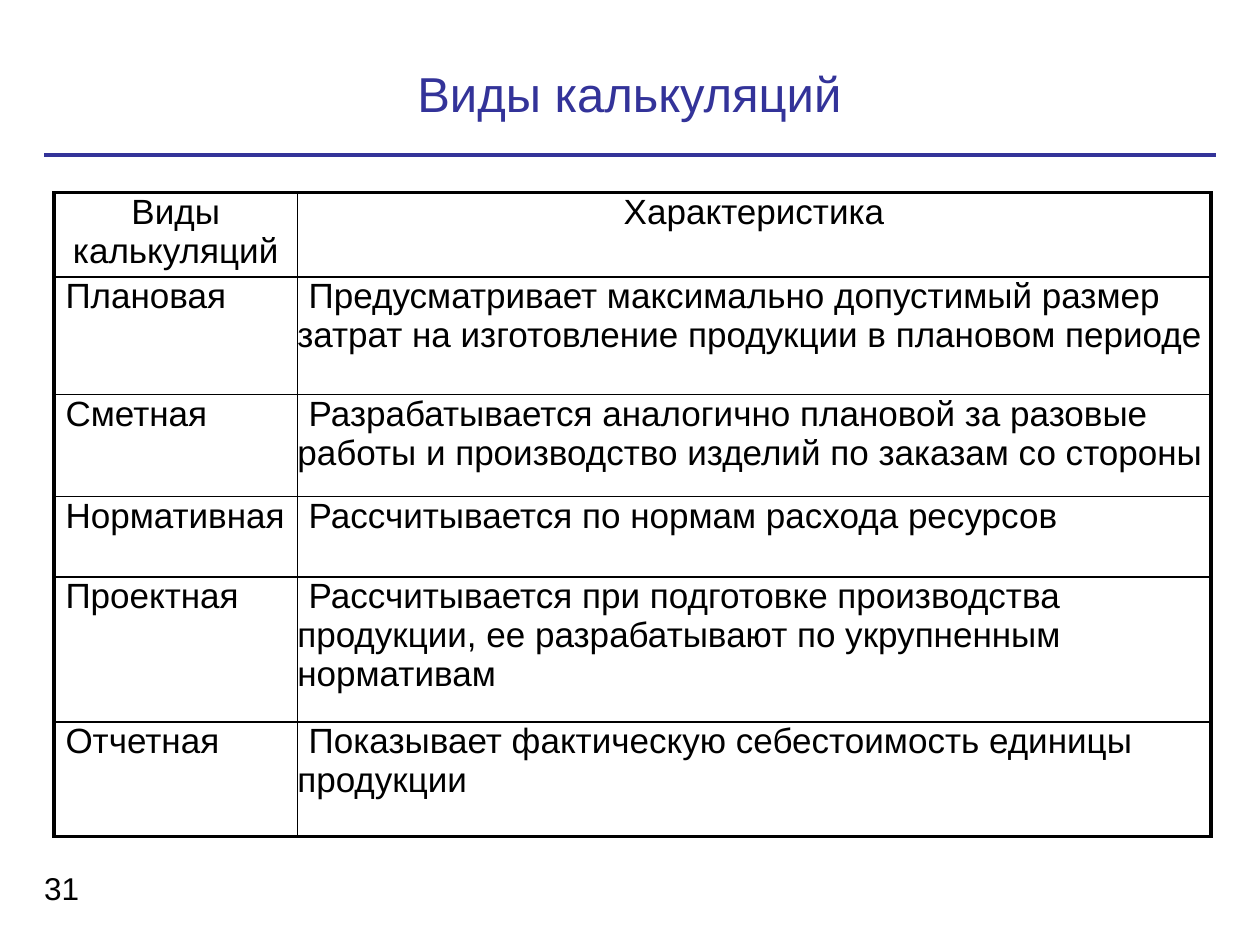
import pptx
import pptx.dml.color
import pptx.enum.shapes
import pptx.enum.text
import pptx.oxml
import pptx.oxml.ns
import pptx.util
from dataclasses import dataclass

ALIGN = pptx.enum.text.PP_ALIGN


@dataclass(frozen=True)
class Theme:
    font: str = "Arial"
    accent: str = "333399"
    ink: str = "000000"
    title_size: float = 28
    table_size: float = 20
    number_size: float = 18
    rule: float = 2
    outer_border: float = 2.25
    inner_border: float = 1
    first_indent: float = 0.9


def grid(count):
    """Length of grid units: the slide has 100 columns and 75 rows."""
    return pptx.util.Inches(count / 10)


class SlideBuilder:
    def __init__(self, deck, theme):
        self.theme = theme
        self.page = deck.slides.add_slide(deck.slide_layouts[5])

    def set_text(self, frame, text, size, color, align=ALIGN.LEFT):
        frame.text = text
        para = frame.paragraphs[0]
        para.alignment = align
        para.font.name = self.theme.font
        para.font.size = pptx.util.Pt(size)
        para.font.color.rgb = pptx.dml.color.RGBColor.from_string(color)
        return para

    def clear_margins(self, holder):
        holder.margin_left = holder.margin_right = 0
        holder.margin_top = holder.margin_bottom = 0

    def title(self, text, left, top, width, height, text_top):
        box = self.page.shapes.title
        box.left, box.top, box.width, box.height = map(grid, (left, top, width, height))
        frame = box.text_frame
        self.clear_margins(frame)
        frame.margin_top = grid(text_top)
        frame.vertical_anchor = pptx.enum.text.MSO_ANCHOR.TOP
        frame.auto_size = pptx.enum.text.MSO_AUTO_SIZE.NONE
        self.set_text(frame, text, self.theme.title_size, self.theme.accent, ALIGN.CENTER)

    def rule(self, left, right, top):
        line = self.page.shapes.add_connector(
            pptx.enum.shapes.MSO_CONNECTOR.STRAIGHT, *map(grid, (left, top, right, top)))
        line.line.width = pptx.util.Pt(self.theme.rule)
        line.line.color.rgb = pptx.dml.color.RGBColor.from_string(self.theme.accent)
        line._element.spPr.append(pptx.oxml.parse_xml(
            f'<a:effectLst {pptx.oxml.ns.nsdecls("a")}/>'))

    def number(self, text, left, top, width, height):
        box = self.page.shapes.add_textbox(*map(grid, (left, top, width, height)))
        frame = box.text_frame
        self.clear_margins(frame)
        frame.word_wrap = False
        frame.auto_size = pptx.enum.text.MSO_AUTO_SIZE.SHAPE_TO_FIT_TEXT
        self.set_text(frame, text, self.theme.number_size, self.theme.ink)

    def border(self, cell, side, width):
        cell._tc.get_or_add_tcPr().append(pptx.oxml.parse_xml(
            f'<a:ln{side} {pptx.oxml.ns.nsdecls("a")} w="{pptx.util.Pt(width)}">'
            f'<a:solidFill><a:srgbClr val="{self.theme.ink}"/></a:solidFill></a:ln{side}>'))

    def table(self, rows, left, top, widths, heights):
        shape = self.page.shapes.add_table(
            len(rows), len(widths),
            *map(grid, (left, top, sum(widths), sum(heights))))
        table = shape.table
        table.first_row = table.horz_banding = False
        for column, width in zip(table.columns, widths):
            column.width = grid(width)
        for row, height in zip(table.rows, heights):
            row.height = grid(height)

        last_row, last_column = len(rows) - 1, len(widths) - 1
        for r, texts in enumerate(rows):
            for c, text in enumerate(texts):
                cell = table.cell(r, c)
                self.clear_margins(cell)
                header = r == 0
                para = self.set_text(cell.text_frame, text, self.theme.table_size,
                                     self.theme.ink, ALIGN.CENTER if header else ALIGN.LEFT)
                if not header:
                    indent = para._p.get_or_add_pPr()
                    indent.set("marL", "0")
                    indent.set("indent", str(grid(self.theme.first_indent)))
                # Heavy frame outside, thin lines inside
                edges = {"L": c == 0, "R": c == last_column,
                         "T": r == 0, "B": r == last_row}
                for side, outer in edges.items():
                    self.border(cell, side, self.theme.outer_border if outer
                                else self.theme.inner_border)
                cell.fill.background()


def main():
    deck = pptx.Presentation()
    deck.slide_width, deck.slide_height = grid(100), grid(75)
    slide = SlideBuilder(deck, Theme())

    # Heading
    slide.title("Виды калькуляций", 3.5, 0, 92.9, 12.3, text_top=5)
    slide.rule(3.5, 96.5, 12.3)

    # Kinds of costing
    slide.table(
        [
            ("Виды калькуляций", "Характеристика"),
            ("Плановая", "Предусматривает максимально допустимый размер затрат "
                         "на изготовление продукции в плановом периоде"),
            ("Сметная", "Разрабатывается аналогично плановой за разовые работы "
                        "и производство изделий по заказам со стороны"),
            ("Нормативная", "Рассчитывается по нормам расхода ресурсов"),
            ("Проектная", "Рассчитывается при подготовке производства продукции, "
                          "ее разрабатывают по укрупненным нормативам"),
            ("Отчетная", "Показывает фактическую себестоимость единицы продукции"),
        ],
        left=4.3, top=15.3, widths=(19.3, 72.5),
        heights=(6.7, 9.3, 8.1, 6.4, 11.5, 9.1))

    # Page number
    slide.number("31", 3.5, 69, 2.8, 3)

    deck.save("out.pptx")


if __name__ == "__main__":
    main()
